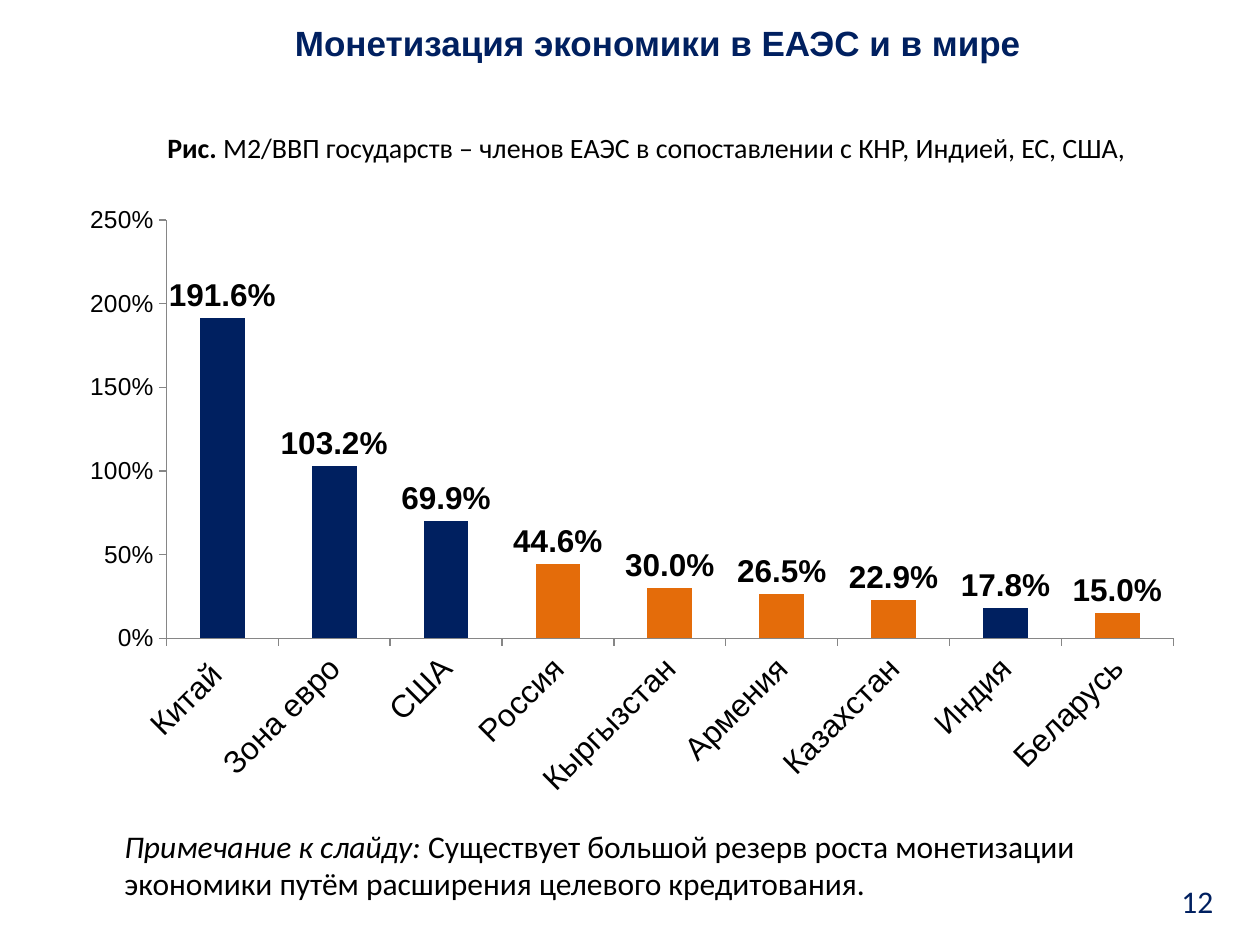
from lxml import etree
from pptx import Presentation
from pptx.chart.data import CategoryChartData
from pptx.dml.color import RGBColor
from pptx.enum.chart import XL_CHART_TYPE as ChartType, XL_LABEL_POSITION as LabelPos
from pptx.enum.chart import XL_TICK_MARK as TickMark
from pptx.enum.text import MSO_ANCHOR as Anchor, PP_ALIGN as Align
from pptx.oxml.ns import qn
from pptx.util import Cm, Pt

# Content
TITLE = "Монетизация экономики в ЕАЭС и в мире"
CAPTION = [
    ("Рис. ", "bold"),
    ("М2/ВВП государств – членов ЕАЭС в сопоставлении с КНР, Индией, ЕС, США,", None),
]
NOTE = [
    ("Примечание к слайду: ", "italic"),
    ("Существует большой резерв роста монетизации экономики "
     "путём расширения целевого кредитования.", None),
]
PAGE = "12"
MONETIZATION = [  # country, M2/GDP, member of the union
    ("Китай ", 1.916, False),
    ("Зона евро", 1.032, False),
    ("США", 0.699, False),
    ("Россия", 0.446, True),
    ("Кыргызстан", 0.3, True),
    ("Армения", 0.265, True),
    ("Казахстан", 0.229, True),
    ("Индия", 0.178, False),
    ("Беларусь", 0.15, True),
]

THEME = {
    "navy": RGBColor(0x00, 0x20, 0x60),
    "orange": RGBColor(0xE4, 0x6C, 0x0A),
    "black": RGBColor(0, 0, 0),
    "axis": RGBColor(0x86, 0x86, 0x86),
    "head": "Arial",
    "body": "Calibri",
    "title": Pt(20),
    "large": Pt(18),
    "caption": Pt(16),
    "scale": Pt(14),
}

# Positions in cm: left, top, width, height
TITLE_BOX = (5.69, 0.2, 16.79, 1.32)
CAPTION_BOX = (0.69, 2.51, 24.69, 0.94)
CHART_BOX = (1.3, 3.94, 22.81, 12.4)
NOTE_BOX = (2.26, 16.54, 21.87, 1.8)
PAGE_BOX = (18.21, 17.65, 6.5, 1.02)
PLOT_AREA = {"x": 0.09, "y": 0.04, "w": 0.89, "h": 0.68}  # shares of the chart


def set_font(font, face, size, color, bold=None, italic=None):
    font.name, font.size, font.bold, font.italic = face, size, bold, italic
    font.color.rgb = color


def add_text(slide, box, runs, size, color, align=Align.LEFT, anchor=Anchor.TOP):
    tf = slide.shapes.add_textbox(*map(Cm, box)).text_frame
    tf.word_wrap = True
    tf.vertical_anchor = anchor
    p = tf.paragraphs[0]
    p.alignment = align
    for text, style in runs:
        r = p.add_run()
        r.text = text
        set_font(r.font, THEME["body"], size, color, style == "bold", style == "italic")


def add_title(slide):
    title = slide.shapes.title
    title.left, title.top, title.width, title.height = map(Cm, TITLE_BOX)
    tf = title.text_frame
    tf.vertical_anchor = Anchor.MIDDLE
    p = tf.paragraphs[0]
    p.alignment = Align.LEFT
    r = p.add_run()
    r.text = TITLE
    set_font(r.font, THEME["head"], THEME["title"], THEME["navy"], bold=True)


def fix_plot_area(chart):
    area = chart._chartSpace.chart.plotArea
    for old in area.findall(qn("c:layout")):
        area.remove(old)
    layout = etree.Element(qn("c:layout"))
    area.insert(0, layout)
    manual = etree.SubElement(layout, qn("c:manualLayout"))
    settings = {"layoutTarget": "inner", "xMode": "edge", "yMode": "edge", **PLOT_AREA}
    for tag, value in settings.items():
        etree.SubElement(manual, qn(f"c:{tag}")).set("val", str(value))


def add_chart(slide):
    data = CategoryChartData(number_format="0.0%")
    data.categories = [country for country, _, _ in MONETIZATION]
    data.add_series("М2/ВВП", [value for _, value, _ in MONETIZATION])
    chart = slide.shapes.add_chart(
        ChartType.COLUMN_CLUSTERED, *map(Cm, CHART_BOX), data).chart
    chart.has_legend = chart.has_title = False
    set_font(chart.font, THEME["head"], THEME["scale"], THEME["black"])
    fix_plot_area(chart)

    # Axes
    countries, scale = chart.category_axis, chart.value_axis
    for axis in (countries, scale):
        axis.has_major_gridlines = False
        axis.major_tick_mark = TickMark.OUTSIDE
        axis.minor_tick_mark = TickMark.NONE
        axis.format.line.color.rgb = THEME["axis"]
        axis.format.line.width = Pt(0.75)
    scale.minimum_scale, scale.maximum_scale, scale.major_unit = 0, 2.5, 0.5
    scale.tick_labels.number_format = "0%"
    scale.tick_labels.number_format_is_linked = False
    set_font(countries.tick_labels.font, THEME["head"], THEME["large"], THEME["black"])
    countries._element.find(qn("c:txPr")).find(qn("a:bodyPr")).set("rot", "-2700000")

    # Columns: union members stand out in orange
    plot = chart.plots[0]
    plot.gap_width = 150
    plot.vary_by_categories = False
    series = plot.series[0]
    series.invert_if_negative = False
    series.format.fill.solid()
    series.format.fill.fore_color.rgb = THEME["navy"]
    for i, (_, _, member) in enumerate(MONETIZATION):
        if member:
            fill = series.points[i].format.fill
            fill.solid()
            fill.fore_color.rgb = THEME["orange"]

    # Value labels
    labels = series.data_labels
    labels.show_value = True
    labels.number_format = "0.0%"
    labels.number_format_is_linked = False
    labels.position = LabelPos.OUTSIDE_END
    set_font(labels.font, THEME["head"], THEME["large"], THEME["black"], bold=True)


def main():
    prs = Presentation()
    prs.slide_width, prs.slide_height = Cm(25.4), Cm(19.05)
    s = prs.slides.add_slide(prs.slide_layouts[5])
    add_title(s)
    add_text(s, PAGE_BOX, [(PAGE, None)], THEME["large"], THEME["navy"],
             Align.RIGHT, Anchor.MIDDLE)
    add_chart(s)
    add_text(s, CAPTION_BOX, CAPTION, THEME["caption"], THEME["black"], Align.CENTER)
    add_text(s, NOTE_BOX, NOTE, THEME["large"], THEME["black"])
    prs.save("out.pptx")


if __name__ == "__main__":
    main()
